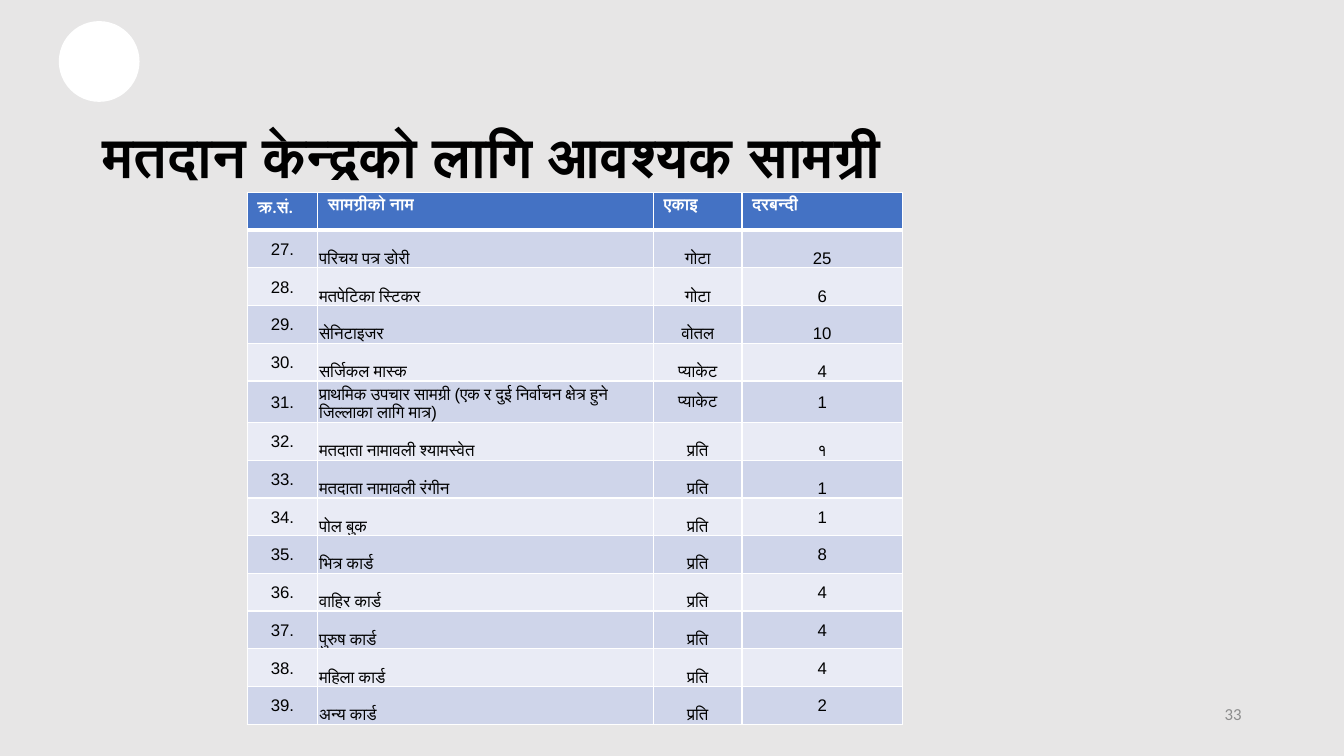
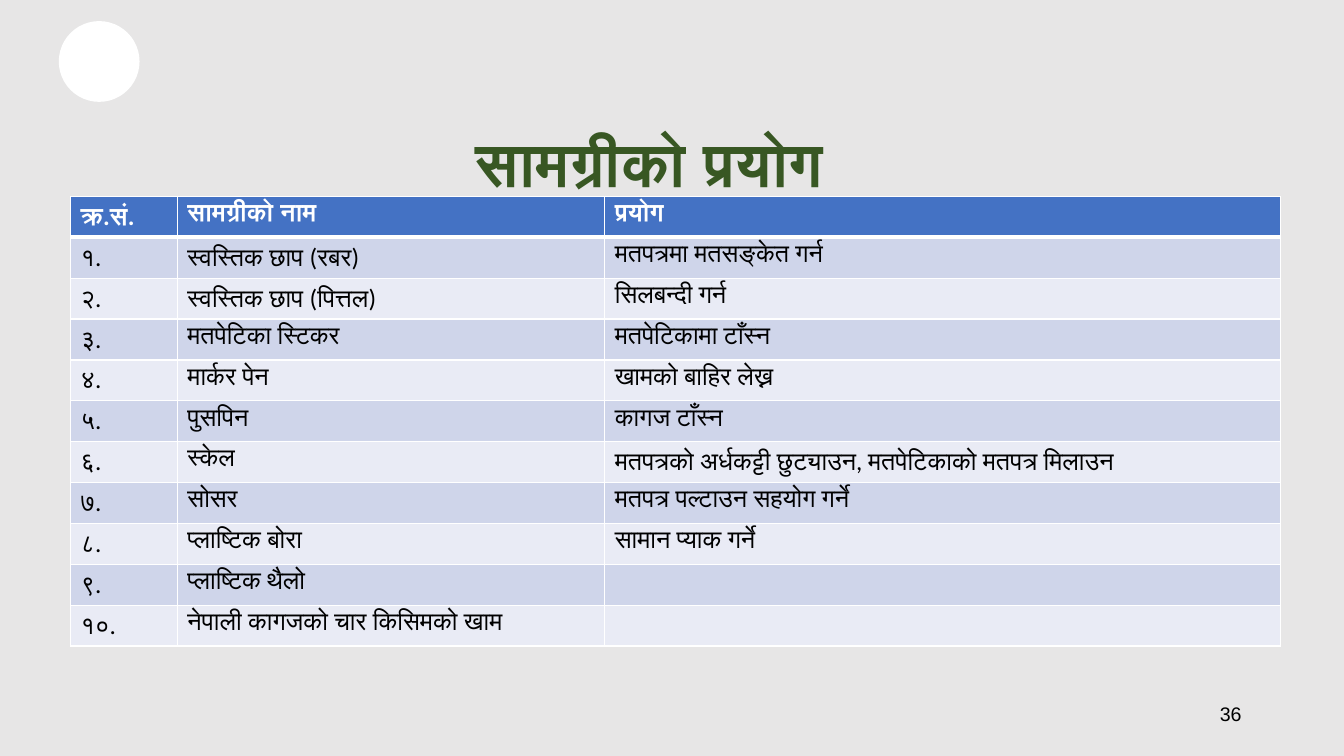
from lxml.etree import SubElement
from pptx import Presentation
from pptx.dml.color import RGBColor
from pptx.enum.shapes import MSO_SHAPE
from pptx.enum.text import MSO_ANCHOR, MSO_AUTO_SIZE, PP_ALIGN
from pptx.oxml import parse_xml
from pptx.oxml.ns import nsdecls, qn
from pptx.util import Cm, Pt

BACKGROUND = RGBColor(0xE7, 0xE6, 0xE6)
WHITE = RGBColor(0xFF, 0xFF, 0xFF)
BLACK = RGBColor(0x00, 0x00, 0x00)
GREY = RGBColor(0x8C, 0x8C, 0x8C)
GREEN = RGBColor(0x38, 0x57, 0x23)
HEADER_BLUE = RGBColor(0x44, 0x72, 0xC4)
BAND_DARK = RGBColor(0xCF, 0xD5, 0xEA)
BAND_LIGHT = RGBColor(0xE9, 0xEB, 0xF5)

FIRST_MATERIAL = 27
MATERIALS = [
    ("परिचय पत्र डोरी", "गोटा", "25"),
    ("मतपेटिका स्टिकर", "गोटा", "6"),
    ("सेनिटाइजर", "वोतल", "10"),
    ("सर्जिकल मास्क", "प्याकेट", "4"),
    ("प्राथमिक उपचार सामग्री (एक र दुई निर्वाचन क्षेत्र हुने जिल्लाका लागि मात्र)", "प्याकेट", "1"),
    ("मतदाता नामावली श्यामस्वेत", "प्रति", "१"),
    ("मतदाता नामावली रंगीन", "प्रति", "1"),
    ("पोल बुक", "प्रति", "1"),
    ("भित्र कार्ड", "प्रति", "8"),
    ("वाहिर कार्ड", "प्रति", "4"),
    ("पुरुष कार्ड", "प्रति", "4"),
    ("महिला कार्ड", "प्रति", "4"),
    ("अन्य कार्ड", "प्रति", "2"),
]
USES = [
    ("१.", "स्वस्तिक छाप (रबर)", "मतपत्रमा मतसङ्केत गर्न"),
    ("२.", "स्वस्तिक छाप (पित्तल)", "सिलबन्दी गर्न"),
    ("३.", "मतपेटिका स्टिकर", "मतपेटिकामा टाँस्न"),
    ("४.", "मार्कर पेन", "खामको बाहिर लेख्न"),
    ("५.", "पुसपिन", "कागज टाँस्न"),
    ("६.", "स्केल", "मतपत्रको अर्धकट्टी छुट्याउन, मतपेटिकाको मतपत्र मिलाउन"),
    ("७.", "सोसर", "मतपत्र पल्टाउन सहयोग गर्ने"),
    ("८.", "प्लाष्टिक बोरा", "सामान प्याक गर्ने"),
    ("९.", "प्लाष्टिक थैलो", ""),
    ("१०.", "नेपाली कागजको चार किसिमको खाम", ""),
]


def write_text(text_frame, text, size=18, font="Calibri", color=BLACK, bold=False,
               align=PP_ALIGN.LEFT, line_spacing=None):
    paragraph = text_frame.paragraphs[0]
    paragraph.alignment = align
    paragraph.line_spacing = line_spacing
    if text:
        run = paragraph.add_run()
        run.text = text
        run.font.size = Pt(size)
        run.font.name = font
        run.font.bold = bold
        run.font.color.rgb = color


def set_borders(cell, top, bottom):
    properties = cell._tc.get_or_add_tcPr()
    widths = (("L", 1), ("R", 1), ("T", top), ("B", bottom))
    for index, (side, width) in enumerate(widths):
        line = parse_xml(f'<a:ln{side} {nsdecls("a")} w="{Pt(width)}"/>')
        fill = SubElement(line, qn("a:solidFill"))
        SubElement(fill, qn("a:srgbClr")).set("val", str(WHITE))
        properties.insert(index, line)


class Deck:
    def __init__(self):
        self.presentation = Presentation()
        self.presentation.slide_width = Cm(33.87)
        self.presentation.slide_height = Cm(19.05)
        fill = self.presentation.slide_master.background.fill
        fill.solid()
        fill.fore_color.rgb = BACKGROUND
        self.slide = None

    def add_slide(self):
        self.slide = self.presentation.slides.add_slide(self.presentation.slide_layouts[5])
        circle = self.slide.shapes.add_shape(MSO_SHAPE.OVAL, Cm(1.5), Cm(0.55), Cm(2), Cm(2))
        circle.shadow.inherit = False
        circle.fill.solid()
        circle.fill.fore_color.rgb = WHITE
        circle.line.color.rgb = WHITE
        circle.line.width = Pt(1)

    def add_title(self, text, left, top, width, height, anchor, **text_format):
        title = self.slide.shapes.title
        title.left, title.top, title.width, title.height = map(Cm, (left, top, width, height))
        title.text_frame.auto_size = MSO_AUTO_SIZE.NONE
        title.text_frame.vertical_anchor = anchor
        write_text(title.text_frame, text, font="Lato", bold=True, **text_format)

    def add_number(self, text, **text_format):
        box = self.slide.shapes.add_textbox(Cm(23.92), Cm(17.48), Cm(7.62), Cm(1.01))
        box.text_frame.word_wrap = True
        box.text_frame.vertical_anchor = MSO_ANCHOR.MIDDLE
        write_text(box.text_frame, text, align=PP_ALIGN.RIGHT, **text_format)

    def add_table(self, header, rows, left, top, widths, row_height, size, font="Calibri"):
        frame = self.slide.shapes.add_table(
            len(rows) + 1, len(header), Cm(left), Cm(top),
            Cm(sum(widths)), Cm(row_height * (len(rows) + 1)))
        table = frame.table
        for column, width in zip(table.columns, widths):
            column.width = Cm(width)
        for row_index, texts in enumerate([header, *rows]):
            table.rows[row_index].height = Cm(row_height)
            is_header = row_index == 0
            band = HEADER_BLUE if is_header else (BAND_LIGHT, BAND_DARK)[row_index % 2]
            for column_index, text in enumerate(texts):
                cell = table.cell(row_index, column_index)
                cell.fill.solid()
                cell.fill.fore_color.rgb = band
                set_borders(cell, 3 if row_index == 1 else 1, 3 if is_header else 1)
                write_text(cell.text_frame, text, size=size, bold=is_header,
                           font="Calibri" if is_header else font,
                           color=WHITE if is_header else BLACK)
        return table


def build_materials_slide(deck):
    deck.add_slide()
    deck.add_title("मतदान केन्द्रको लागि आवश्यक सामग्री", 2.33, 2.87, 29.21, 2.29,
                   MSO_ANCHOR.MIDDLE, size=40, line_spacing=0.9)
    deck.add_number("33", size=12, color=GREY)
    rows = [(f"{number}.", *material)
            for number, material in enumerate(MATERIALS, FIRST_MATERIAL)]
    table = deck.add_table(("क्र.सं.", "सामग्रीको नाम", "एकाइ", "दरबन्दी"), rows,
                           6.23, 4.85, (1.78, 8.46, 2.23, 4.04), 0.95, 12, "Arial")
    for row_index in range(1, len(rows) + 1):
        number = FIRST_MATERIAL + row_index - 1
        middle_columns = {0}
        if number == 31:
            middle_columns = {0, 2, 3}
        elif number >= 34:
            middle_columns = {0, 3}
        for column_index in range(4):
            cell = table.cell(row_index, column_index)
            cell.margin_left = cell.margin_right = cell.margin_top = Cm(0.03)
            cell.margin_bottom = 0
            is_middle = column_index in middle_columns
            cell.vertical_anchor = MSO_ANCHOR.MIDDLE if is_middle else MSO_ANCHOR.BOTTOM
            if column_index != 1:
                cell.text_frame.paragraphs[0].alignment = PP_ALIGN.CENTER


def build_uses_slide(deck):
    deck.add_slide()
    deck.add_title("सामग्रीको प्रयोग", 2.82, 3.02, 27.1, 2.11, MSO_ANCHOR.TOP,
                   size=44, color=GREEN, align=PP_ALIGN.CENTER)
    deck.add_number("36", size=14, font="Arial")
    deck.add_table(("क्र.सं.", "सामग्रीको नाम", "प्रयोग"), USES,
                   1.78, 4.95, (2.69, 10.77, 17.02), 1.03, 18)


def main():
    deck = Deck()
    build_materials_slide(deck)
    build_uses_slide(deck)
    deck.presentation.save("out.pptx")


if __name__ == "__main__":
    main()
